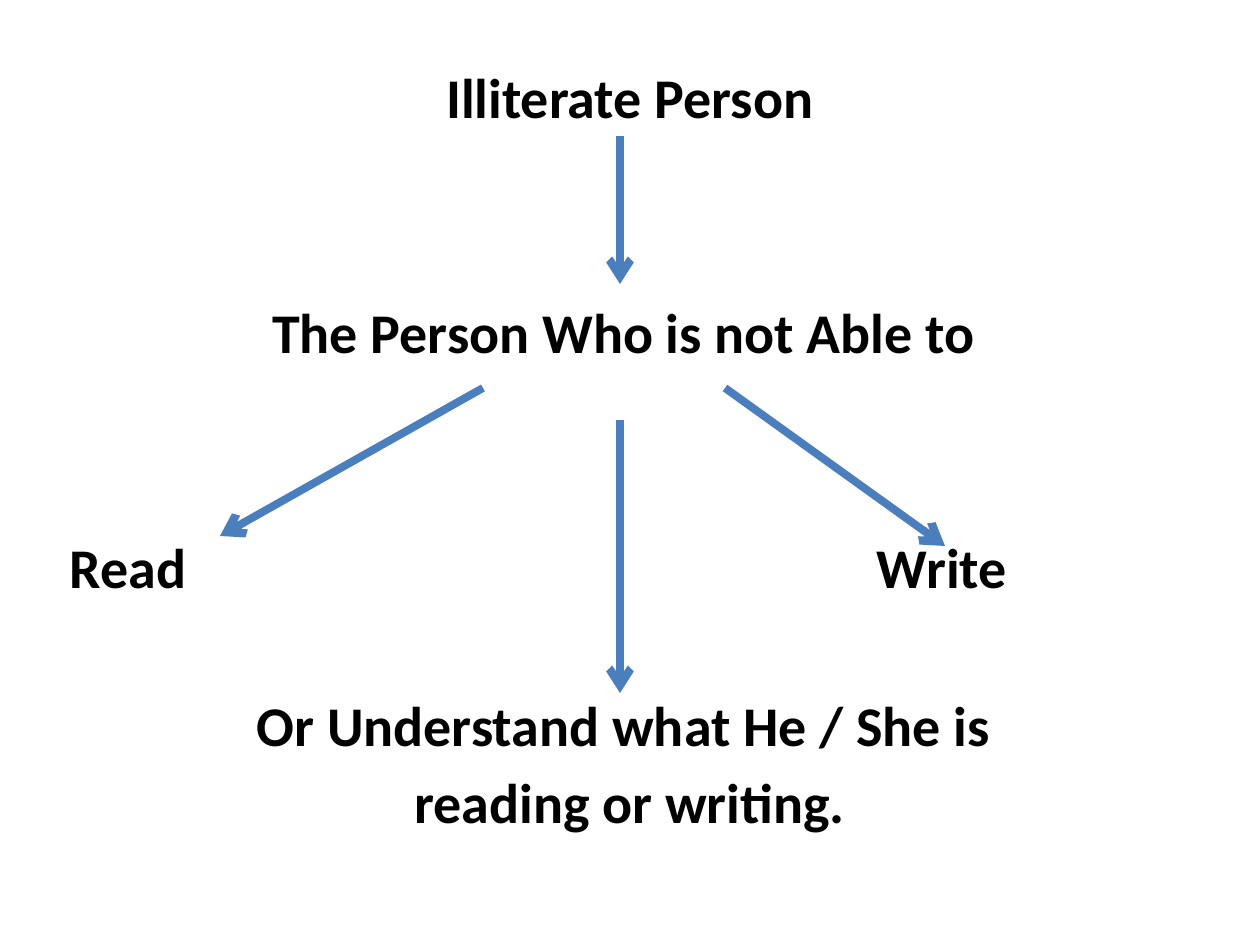
from typing import NamedTuple

from lxml import etree
from pptx import Presentation
from pptx.dml.color import RGBColor
from pptx.enum.shapes import MSO_CONNECTOR
from pptx.enum.text import MSO_ANCHOR, MSO_AUTO_SIZE, PP_ALIGN
from pptx.oxml.ns import qn
from pptx.shapes.autoshape import Shape
from pptx.slide import Slide
from pptx.util import Emu, Pt

STRAIGHT = MSO_CONNECTOR.STRAIGHT
TOP = MSO_ANCHOR.TOP
FIXED_SIZE = MSO_AUTO_SIZE.NONE
CENTER = PP_ALIGN.CENTER
LEFT = PP_ALIGN.LEFT

BLACK = RGBColor(0x00, 0x00, 0x00)
BLUE = RGBColor(0x4B, 0x7E, 0xBC)

PX_PER_INCH = 126
EMU_PER_PX = 914400 / PX_PER_INCH
LINE_HEIGHT = 68
MARGIN = 70
FULL_WIDTH = 1120


class Statement(NamedTuple):
    lines: tuple[str, ...]
    left: int
    top: int
    width: int
    align: PP_ALIGN = CENTER


class Arrow(NamedTuple):
    x1: int
    y1: int
    x2: int
    y2: int


HEADING = Statement(("Illiterate Person",), MARGIN, 62, FULL_WIDTH)
STATEMENTS = (
    Statement(("The Person Who is not Able to ",), MARGIN, 298, FULL_WIDTH),
    Statement(("Read",), MARGIN, 533, 200, LEFT),
    Statement(("Write",), 877, 533, 200, LEFT),
    Statement(
        ("Or Understand what He / She is ", "reading or writing."),
        MARGIN, 690, FULL_WIDTH,
    ),
)
ARROWS = (
    Arrow(620, 136, 620, 284),
    Arrow(483, 388, 220, 536),
    Arrow(725, 388, 945, 546),
    Arrow(620, 420, 620, 693),
)


def px(length: int) -> Emu:
    return Emu(round(length * EMU_PER_PX))


def write_text(
    box: Shape,
    lines: tuple[str, ...],
    *,
    align: PP_ALIGN = CENTER,
    size: int = 32,
    font: str = "Calibri",
    color: RGBColor = BLACK,
    bold: bool = True,
    gap: int = 6,
) -> None:
    frame = box.text_frame
    frame.word_wrap = True
    frame.auto_size = FIXED_SIZE
    frame.vertical_anchor = TOP
    frame.margin_left = frame.margin_right = 0
    frame.margin_top = frame.margin_bottom = 0
    for index, line in enumerate(lines):
        paragraph = frame.add_paragraph() if index else frame.paragraphs[0]
        paragraph.alignment = align
        paragraph.space_before = Pt(gap if index else 0)
        run = paragraph.add_run()
        run.text = line
        run.font.name = font
        run.font.size = Pt(size)
        run.font.bold = bold
        run.font.color.rgb = color


def place_statement(box: Shape, statement: Statement) -> None:
    box.left, box.top = px(statement.left), px(statement.top)
    box.width = px(statement.width)
    box.height = px(LINE_HEIGHT * len(statement.lines) + 10)
    write_text(box, statement.lines, align=statement.align)


def draw_arrow(slide: Slide, arrow: Arrow) -> None:
    connector = slide.shapes.add_connector(STRAIGHT, *map(px, arrow))
    connector.line.color.rgb = BLUE
    connector.line.width = Pt(4.5)
    outline = connector.line._get_or_add_ln()
    etree.SubElement(outline, qn("a:tailEnd"), type="arrow")
    etree.SubElement(connector._element.spPr, qn("a:effectLst"))


def main() -> None:
    presentation = Presentation()
    presentation.slide_width = px(1260)
    presentation.slide_height = px(945)
    slide = presentation.slides.add_slide(presentation.slide_layouts[5])
    place_statement(slide.shapes.title, HEADING)
    for statement in STATEMENTS:
        place_statement(slide.shapes.add_textbox(0, 0, 0, 0), statement)
    for arrow in ARROWS:
        draw_arrow(slide, arrow)
    presentation.save("out.pptx")


if __name__ == "__main__":
    main()
